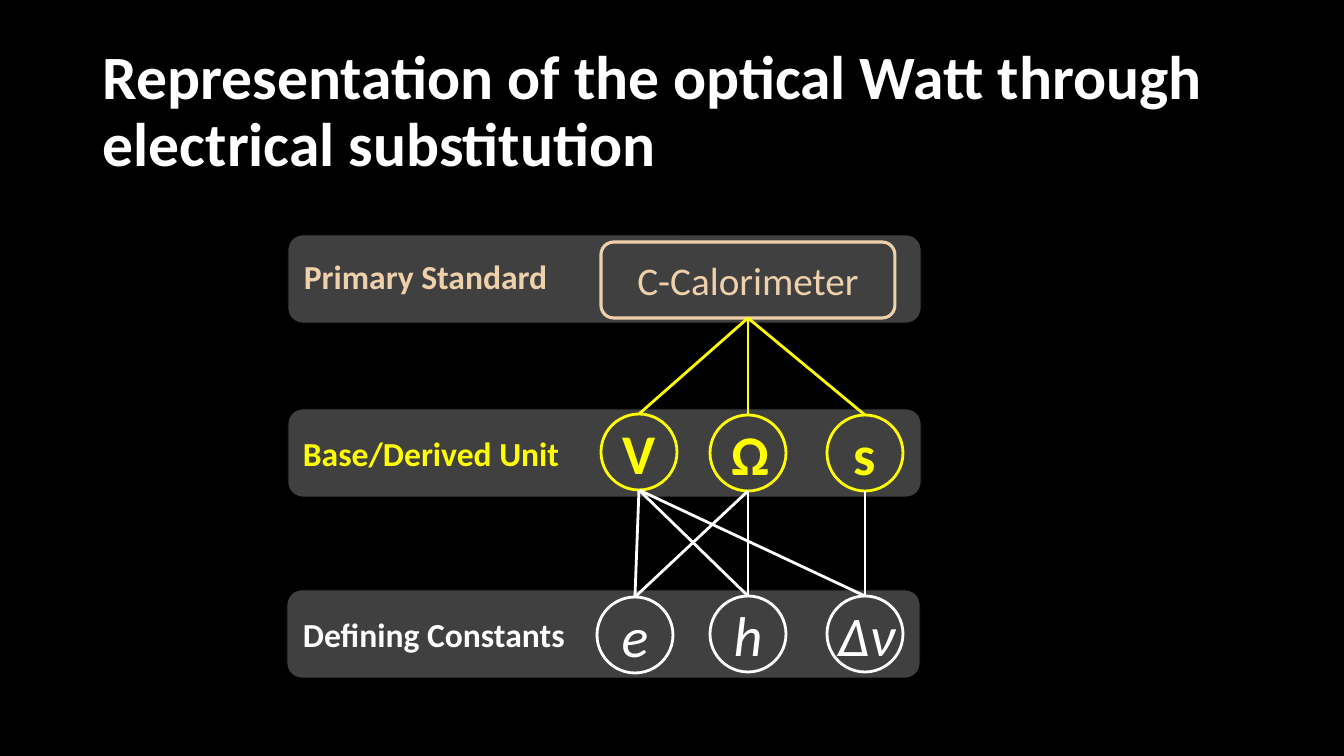
from dataclasses import dataclass

import pptx
import pptx.dml.color
import pptx.enum.shapes
import pptx.enum.text
import pptx.oxml.ns
import pptx.util
from lxml import etree

EMU_PER_PX = 914400 / 100.8
WHITE, YELLOW, SAND, GREY, BLACK = "FFFFFF", "FFFF00", "EED1AB", "404040", "000000"
BAR_W, BAR_H = 633, 88
LABEL_W, LABEL_H = 285, 54
CIRCLE = 76
SHAPE = pptx.enum.shapes.MSO_SHAPE
ALIGN = pptx.enum.text.PP_ALIGN


@dataclass
class Level:
    text: str
    color: str
    bar_x: int
    bar_y: int
    label_x: int
    label_y: int


@dataclass
class Node:
    text: str
    x: int
    y: int
    is_unit: bool


LEVELS = [
    Level("Defining Constants", WHITE, 287, 590, 293, 607),
    Level("Base/Derived Unit", YELLOW, 288, 409, 293, 426),
    Level("Primary Standard", SAND, 288, 235, 294, 249),
]
NODES = [
    Node("V", 601, 414, True),
    Node("Ω", 710, 415, True),
    Node("s", 827, 415, True),
    Node("e", 597, 597, False),
    Node("h", 710, 596, False),
    Node("Δν", 827, 596, False),
]
# Which constants define each unit
DEFINED_BY = {"V": ["e", "h", "Δν"], "Ω": ["e", "h"], "s": ["Δν"]}


def px(n: float) -> int:
    return round(n * EMU_PER_PX)


def rgb(color: str) -> pptx.dml.color.RGBColor:
    return pptx.dml.color.RGBColor.from_string(color)


def write(sp, text: str, size: int, color: str, bold=False, italic=False,
          align=ALIGN.LEFT, spacing=None, wrap=True):
    tf = sp.text_frame
    tf.word_wrap = wrap
    tf.vertical_anchor = pptx.enum.text.MSO_ANCHOR.MIDDLE
    p = tf.paragraphs[0]
    p.alignment = align
    p.line_spacing = spacing
    r = p.add_run()
    r.text = text
    r.font.name = "Calibri"
    r.font.size = pptx.util.Pt(size)
    r.font.bold = bold
    r.font.italic = italic
    r.font.color.rgb = rgb(color)


def add_text(s, x: int, y: int, w: int, h: int):
    return s.shapes.add_textbox(px(x), px(y), px(w), px(h))


def add_shape(s, kind, x: int, y: int, w: int, h: int, line: str, width: float, fill=None):
    sp = s.shapes.add_shape(kind, px(x), px(y), px(w), px(h))
    sp.shadow.inherit = False
    if fill:
        sp.fill.solid()
        sp.fill.fore_color.rgb = rgb(fill)
    else:
        sp.fill.background()
    sp.line.color.rgb = rgb(line)
    sp.line.width = pptx.util.Pt(width)
    return sp


def add_level(s, level: Level):
    add_shape(s, SHAPE.ROUNDED_RECTANGLE, level.bar_x, level.bar_y, BAR_W, BAR_H,
              BLACK, 0.5, GREY)
    label = add_text(s, level.label_x, level.label_y, LABEL_W, LABEL_H)
    write(label, level.text, 24, level.color, bold=True)


def add_node(s, node: Node):
    color = YELLOW if node.is_unit else WHITE
    sp = add_shape(s, SHAPE.OVAL, node.x, node.y, CIRCLE, CIRCLE, color, 2)
    wide = len(node.text) > 1
    if wide:
        tf = sp.text_frame
        tf.margin_left = tf.margin_right = tf.margin_top = tf.margin_bottom = 0
    write(sp, node.text, 40, color, bold=node.is_unit, italic=not node.is_unit,
          align=ALIGN.LEFT if wide else ALIGN.CENTER, wrap=not wide)
    return sp


def add_link(s, upper, lower, color: str):
    """Line from the bottom of the upper shape to the top of the lower one."""
    line = s.shapes.add_connector(
        pptx.enum.shapes.MSO_CONNECTOR.STRAIGHT,
        upper.left + upper.width // 2, upper.top + upper.height,
        lower.left + lower.width // 2, lower.top)
    if upper.auto_shape_type == SHAPE.ROUNDED_RECTANGLE:
        line.begin_connect(upper, 2)
    line.end_connect(lower, 0)
    line.line.color.rgb = rgb(color)
    line.line.width = pptx.util.Pt(2)
    sp_pr = line._element.find(pptx.oxml.ns.qn("p:spPr"))
    etree.SubElement(sp_pr, pptx.oxml.ns.qn("a:effectLst"))


def main():
    prs = pptx.Presentation()
    prs.slide_width, prs.slide_height = px(1344), px(756)
    s = prs.slides.add_slide(prs.slide_layouts[6])
    s.background.fill.solid()
    s.background.fill.fore_color.rgb = rgb(BLACK)

    # Title
    title = add_text(s, 93, 40, 1159, 146)
    write(title, "Representation of the optical Watt through electrical substitution",
          44, WHITE, bold=True, spacing=0.9)

    # Levels, from the constants up to the standard
    for level in LEVELS:
        add_level(s, level)

    # Primary standard, units and constants
    standard = add_shape(s, SHAPE.ROUNDED_RECTANGLE, 601, 242, 294, 76, SAND, 2.25)
    write(standard, "C-Calorimeter", 28, SAND, align=ALIGN.CENTER)
    circles = {node.text: add_node(s, node) for node in NODES}

    # Links between the levels
    for unit, constants in DEFINED_BY.items():
        for constant in constants:
            add_link(s, circles[unit], circles[constant], WHITE)
        add_link(s, standard, circles[unit], YELLOW)

    prs.save("out.pptx")


if __name__ == "__main__":
    main()
